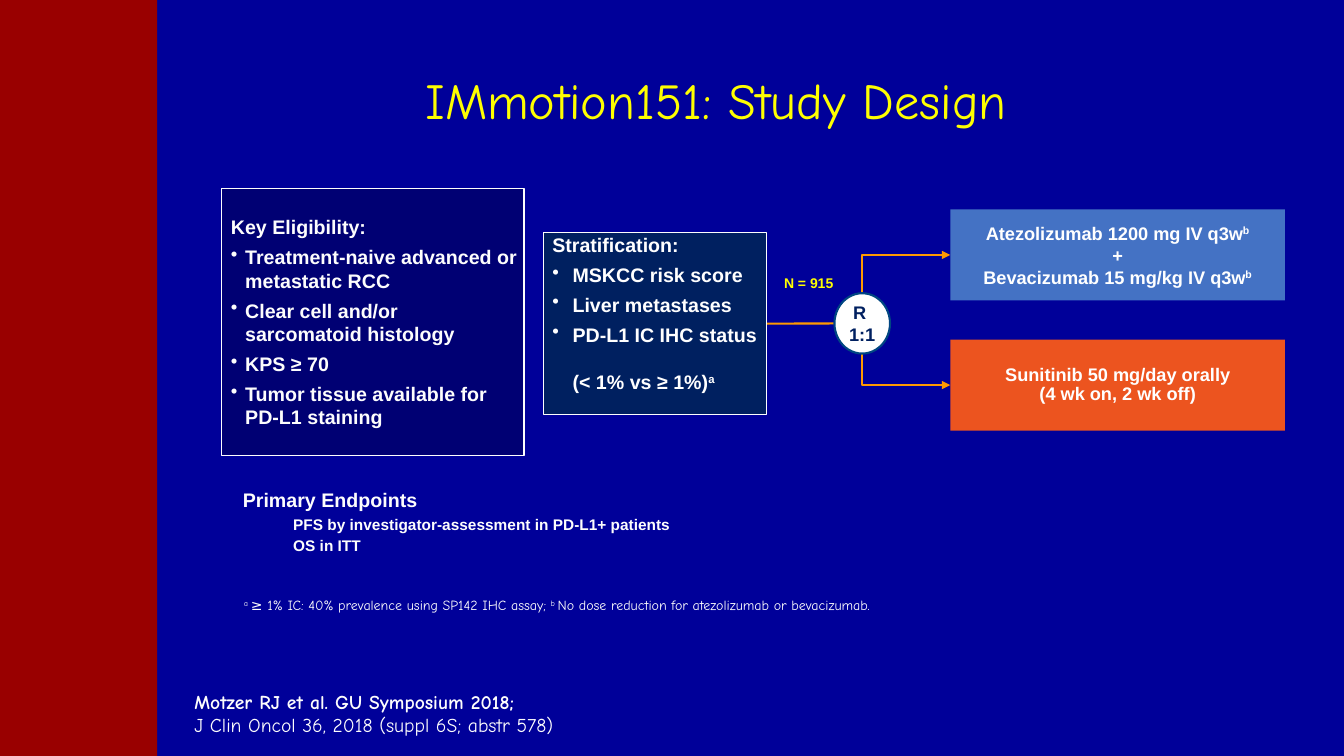
from dataclasses import dataclass

from lxml.etree import SubElement
from pptx import Presentation
from pptx.dml.color import RGBColor as RGB
from pptx.enum.shapes import MSO_CONNECTOR as Link, MSO_SHAPE as Form
from pptx.enum.text import MSO_ANCHOR as Anchor, PP_ALIGN as Align
from pptx.oxml.ns import qn
from pptx.util import Cm, Pt


@dataclass(frozen=True)
class Theme:
    back: str = "000099"
    band: str = "990000"
    panel: str = "000073"
    navy: str = "002060"
    ring: str = "004682"
    blue: str = "4472C4"
    orange: str = "EC541F"
    arrow: str = "FF9900"
    yellow: str = "FFFF00"
    white: str = "FFFFFF"
    pale: str = "FDFDFD"
    sans: str = "Arial"
    hand: str = "Comic Neue"
    title: int = 36
    body: int = 14
    arm: int = 13
    sub: int = 11
    small: int = 10


@dataclass
class Para:
    """One paragraph; text between ^ marks is superscript."""
    text: str
    size: float
    color: str = Theme.pale
    face: str = Theme.sans
    bold: bool = True
    align: Align = Align.LEFT
    before: float = 0
    lead: float = 1.0
    left: float = 0
    bullet: bool = False


class Page:
    def __init__(self, deck, theme):
        self.theme = theme
        self.slide = deck.slides.add_slide(deck.slide_layouts[6])
        self.shapes = self.slide.shapes
        fill = self.slide.background.fill
        fill.solid()
        fill.fore_color.rgb = RGB.from_string(theme.back)

    def shape(self, form, area, fill, line=None, width=1):
        item = self.shapes.add_shape(form, *map(Cm, area))
        item.shadow.inherit = False
        item.fill.solid()
        item.fill.fore_color.rgb = RGB.from_string(fill)
        if line:
            item.line.color.rgb = RGB.from_string(line)
            item.line.width = Pt(width)
        else:
            item.line.fill.background()
        return item

    def label(self, area, paras, **style):
        item = self.shapes.add_textbox(*map(Cm, area))
        self.put(item, paras, **style)

    def put(self, item, paras, anchor=Anchor.TOP,
            inset=(0.25, 0.13, 0.25, 0.13), wrap=True):
        """Fill a shape with text; inset is left, top, right, bottom."""
        frame = item.text_frame
        frame.word_wrap = wrap
        frame.vertical_anchor = anchor
        (frame.margin_left, frame.margin_top,
         frame.margin_right, frame.margin_bottom) = map(Cm, inset)
        for num, para in enumerate(paras):
            line = frame.add_paragraph() if num else frame.paragraphs[0]
            self.fill(line, para)

    def fill(self, line, para):
        line.alignment = para.align
        line.line_spacing = para.lead
        line.space_before = Pt(para.before)
        props = line._p.get_or_add_pPr()
        props.set("marL", str(Cm(para.left)))
        props.set("indent", str(-Cm(para.left) if para.bullet else 0))
        if para.bullet:
            SubElement(props, qn("a:buChar")).set("char", "•")
        for num, text in enumerate(para.text.split("^")):
            if not text:
                continue
            run = line.add_run()
            run.text = text
            font = run.font
            font.name, font.size, font.bold = para.face, Pt(para.size), para.bold
            font.color.rgb = RGB.from_string(para.color)
            if num % 2:
                run._r.get_or_add_rPr().set("baseline", "30000")

    def link(self, start, end, bent=False):
        """Draw a line; a bent one has one corner and an arrowhead at its start."""
        kind = Link.ELBOW if bent else Link.STRAIGHT
        item = self.shapes.add_connector(kind, *map(Cm, start + end))
        item.line.color.rgb = RGB.from_string(self.theme.arrow)
        item.line.width = Pt(1.5)
        props = item._element.spPr
        if bent:
            props.find(qn("a:prstGeom")).set("prst", "bentConnector2")
            SubElement(props.find(qn("a:ln")), qn("a:headEnd")).set("type", "triangle")
        SubElement(props, qn("a:effectLst"))
        return item


def main():
    deck = Presentation()
    deck.slide_width, deck.slide_height = Cm(33.87), Cm(19.05)
    look = Theme()
    page = Page(deck, look)

    page.shape(Form.RECTANGLE, (0, 0, 3.96, 19.05), look.band)
    page.label((7.67, 1.3, 20.75, 2.39), [
        Para("IMmotion151: Study Design", look.title, look.yellow, look.hand,
             bold=False, align=Align.CENTER)], anchor=Anchor.MIDDLE)

    entry = page.shape(Form.RECTANGLE, (5.59, 4.75, 7.62, 6.73), look.panel, look.pale)
    needs = ["Treatment-naive advanced or metastatic RCC",
             "Clear cell and/or sarcomatoid histology",
             "KPS ≥ 70",
             "Tumor tissue available for PD-L1 staining"]
    page.put(entry, [Para("Key Eligibility:", look.body)] + [
        Para(need, look.body, before=4.5, left=0.36, bullet=True) for need in needs],
        Anchor.MIDDLE, (0.23, 0.18, 0.1, 0.18))

    strata = page.shape(Form.RECTANGLE, (13.69, 5.87, 5.64, 4.57), look.navy,
                        look.pale, 0.75)
    traits = ["MSKCC risk score", "Liver metastases", "PD-L1 IC IHC status"]
    page.put(strata, [Para("Stratification:", look.body, look.white)] + [
        Para(trait, look.body, look.white, before=4.5, left=0.51, bullet=True)
        for trait in traits] + [
        Para("(< 1% vs ≥ 1%)^a", look.body, look.white, before=17, left=0.51)],
        inset=(0.23, 0, 0.1, 0))

    hub_x, hub_y, hub_w, hub_h = 21.73, 8.15, 1.4, 1.52
    arm_x, arm_w, arm_h = 23.95, 8.43, 2.29
    arms = [
        (5.28, look.blue, -1, 1.0, ["Atezolizumab 1200 mg IV q3w^b", "+",
                                    "Bevacizumab 15 mg/kg IV q3w^b"]),
        (8.56, look.orange, 1, 0.9, ["Sunitinib 50 mg/day orally",
                                     "(4 wk on, 2 wk off)"]),
    ]
    for top, color, side, lead, lines in arms:
        page.link((arm_x, top + arm_h / 2), (hub_x, hub_y + side * hub_h / 2), bent=True)
        arm = page.shape(Form.RECTANGLE, (arm_x, top, arm_w, arm_h), color)
        page.put(arm, [Para(line, look.arm, look.white, align=Align.CENTER, lead=lead)
                       for line in lines], Anchor.MIDDLE, (0.05,) * 4)

    stem = page.link((19.33, hub_y), (hub_x - hub_w / 2, hub_y))
    stem.begin_connect(strata, 3)
    hub = page.shape(Form.OVAL, (hub_x - hub_w / 2, hub_y - hub_h / 2, hub_w, hub_h),
                     look.white, look.ring, 1.5)
    page.put(hub, [Para(text, look.arm, look.navy, align=Align.CENTER)
                   for text in ("R ", "1:1")], Anchor.MIDDLE, (0,) * 4)
    page.label((19.51, 6.78, 1.83, 0.71),
               [Para("N = 915", look.small, look.yellow)], wrap=False)

    goals = ["PFS by investigator-assessment in PD-L1+ patients", "OS in ITT"]
    page.label((5.87, 12.17, 12.17, 1.93), [Para("Primary Endpoints", look.body)] + [
        Para(goal, look.sub, before=2.2, left=1.27) for goal in goals])
    page.label((6.15, 14.91, 18.11, 0.56), [
        Para("^a ^≥ 1% IC: 40% prevalence using SP142 IHC assay; "
             "^b ^No dose reduction for atezolizumab or bevacizumab.",
             look.small, face=look.hand, bold=False, lead=0.9)],
        anchor=Anchor.BOTTOM, inset=(0,) * 4)
    page.label((4.65, 17.25, 19.25, 1.45), [
        Para("Motzer RJ et al. GU Symposium 2018;", look.body, face=look.hand),
        Para("J Clin Oncol 36, 2018 (suppl 6S; abstr 578)", look.body,
             face=look.hand, bold=False)])

    deck.save("out.pptx")


if __name__ == "__main__":
    main()
